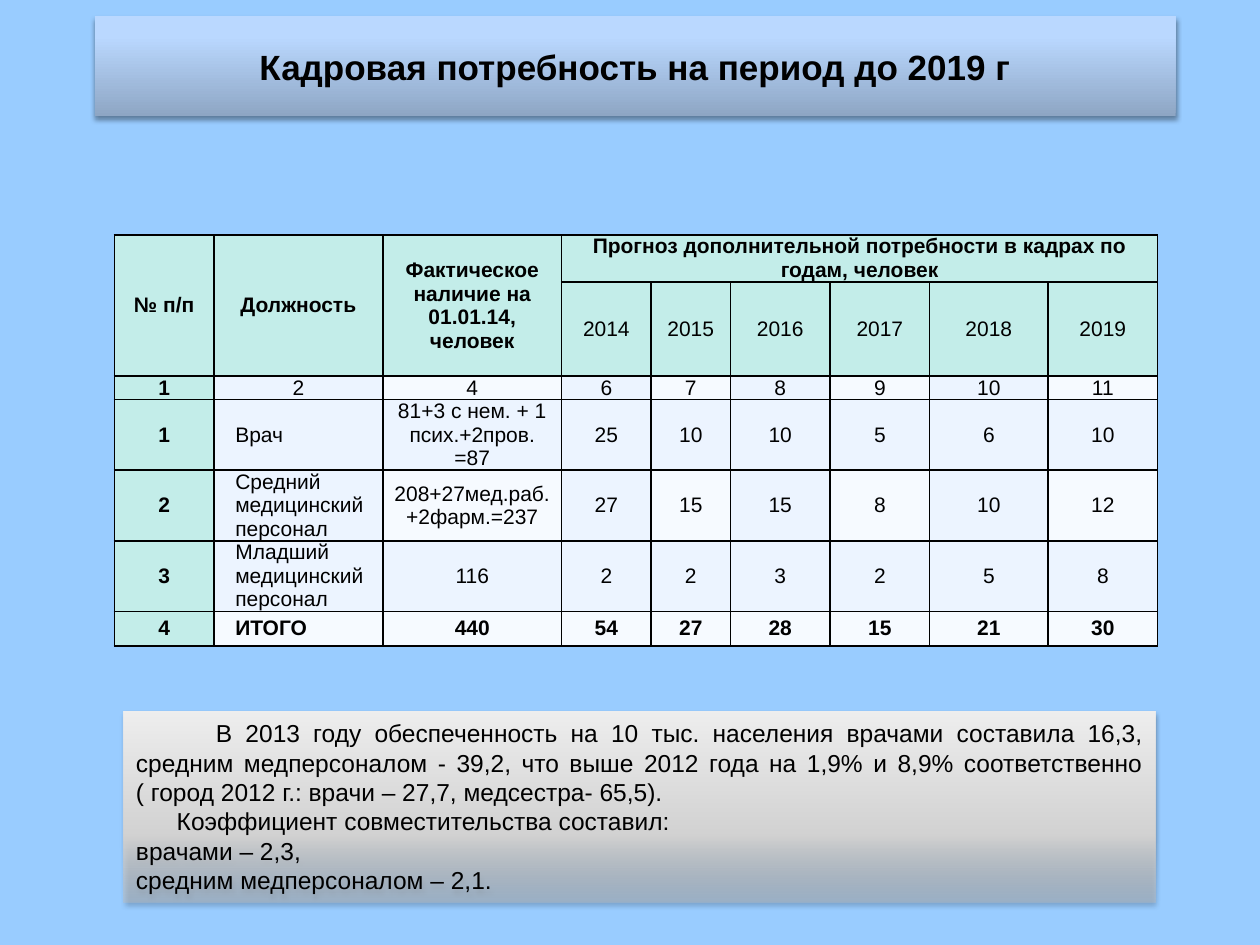
from dataclasses import dataclass

from pptx import Presentation
from pptx.dml.color import RGBColor
from pptx.enum.shapes import MSO_SHAPE
from pptx.enum.text import MSO_ANCHOR, PP_ALIGN
from pptx.oxml.ns import qn
from pptx.util import Pt
from lxml.etree import SubElement


@dataclass(frozen=True)
class Theme:
    font: str = "Arial"
    background: str = "99CCFF"
    ink: str = "000000"
    header: str = "C3EDE9"
    light: str = "ECF4FF"
    pale: str = "F6FAFF"
    title_stops: tuple = ((0, "8EA6C4", 100), (80, "BAD8FF", 100), (100, "BAD8FF", 100))
    note_stops: tuple = ((0, "BDBDBD", 46), (35, "D1D1D1", 100), (100, "EEEEEE", 100))
    title_size: int = 20
    table_size: int = 12
    note_size: int = 14


THEME = Theme()

COLUMN_WIDTHS = (56.9, 96.5, 102.2, 51.1, 45.4, 56.9, 56.9, 67.7, 62.6)
ROW_HEIGHTS = (26.8, 53.7, 13.5, 40.3, 40.3, 40.3, 19.7)
YEARS = range(2014, 2020)
HEADINGS = (
    "№ п/п",
    "Должность",
    "Фактическое наличие на 01.01.14, человек",
    "Прогноз дополнительной потребности в кадрах по годам, человек",
)
STAFF = (
    (1, 2, 4, 6, 7, 8, 9, 10, 11),
    (1, "Врач", "81+3 с нем. + 1 псих.+2пров. =87", 25, 10, 10, 5, 6, 10),
    (2, "Средний медицинский персонал", "208+27мед.раб.+2фарм.=237", 27, 15, 15, 8, 10, 12),
    (3, "Младший медицинский персонал", 116, 2, 2, 3, 2, 5, 8),
    (4, "ИТОГО", 440, 54, 27, 28, 15, 21, 30),
)
NUMBERING, TOTAL = 0, len(STAFF) - 1
ALTERNATING = (0, 2)
NOTES = (
    ("В 2013 году обеспеченность на 10 тыс. населения врачами составила 16,3, "
     "средним медперсоналом - 39,2, что выше 2012 года на 1,9% и 8,9% соответственно "
     "( город 2012 г.: врачи – 27,7, медсестра- 65,5).", 45.7),
    ("Коэффициент совместительства составил:", 23.3),
    ("врачами – 2,3,", 0),
    ("средним медперсоналом – 2,1.", 0),
)


def write(paragraph, text, size, bold=False, align=PP_ALIGN.CENTER, left=0, first_line=0):
    properties = paragraph._p.get_or_add_pPr()
    properties.set("marL", str(Pt(left)))
    properties.set("indent", str(Pt(first_line)))
    paragraph.alignment = align
    run = paragraph.add_run()
    run.text = str(text)
    run.font.name = THEME.font
    run.font.size = Pt(size)
    run.font.bold = bold
    run.font.color.rgb = RGBColor.from_string(THEME.ink)


def add_color(parent, color, opacity):
    node = SubElement(parent, qn("a:srgbClr"), val=color)
    if opacity < 100:
        SubElement(node, qn("a:alpha"), val=str(opacity * 1000))


def style_panel(panel, stops):
    panel.fill.gradient()
    panel.fill.gradient_angle = 90
    panel.line.fill.background()
    stop_list = panel.element.spPr.find(qn("a:gradFill")).find(qn("a:gsLst"))
    for old_stop in list(stop_list):
        stop_list.remove(old_stop)
    for position, color, opacity in stops:
        stop = SubElement(stop_list, qn("a:gs"), pos=str(position * 1000))
        add_color(stop, color, opacity)
    panel.shadow.inherit = False
    shadow = SubElement(
        panel.element.spPr.find(qn("a:effectLst")), qn("a:outerShdw"),
        blurRad=str(Pt(3.1)), dist=str(Pt(1.6)), dir="5400000", rotWithShape="0")
    add_color(shadow, THEME.ink, 38)


def add_borders(cell):
    properties = cell._tc.get_or_add_tcPr()
    for index, side in enumerate(("lnL", "lnR", "lnT", "lnB")):
        border = SubElement(properties, qn(f"a:{side}"), w=str(Pt(1)))
        add_color(SubElement(border, qn("a:solidFill")), THEME.ink, 100)
        properties.remove(border)
        properties.insert(index, border)


def style_cell(cell, color):
    cell.fill.solid()
    cell.fill.fore_color.rgb = RGBColor.from_string(color)
    cell.vertical_anchor = MSO_ANCHOR.MIDDLE
    cell.margin_left = cell.margin_right = Pt(3.6)
    cell.margin_top = cell.margin_bottom = 0
    add_borders(cell)


def staff_color(row, column):
    if column == 0:
        return THEME.header
    if row == TOTAL or (row in ALTERNATING and column % 2 == 0):
        return THEME.pale
    return THEME.light


def add_title(slide):
    title = slide.shapes.title
    title.left, title.top, title.width, title.height = Pt(54), Pt(9.4), Pt(617.8), Pt(56.9)
    title.text_frame.vertical_anchor = MSO_ANCHOR.MIDDLE
    write(title.text_frame.paragraphs[0], "Кадровая потребность на период до 2019 г",
          THEME.title_size, bold=True)
    style_panel(title, THEME.title_stops)


def add_staff_table(slide):
    table = slide.shapes.add_table(
        len(ROW_HEIGHTS), len(COLUMN_WIDTHS), Pt(65.4), Pt(134.2),
        Pt(sum(COLUMN_WIDTHS)), Pt(sum(ROW_HEIGHTS))).table
    table.first_row = table.horz_banding = False
    for column, width in zip(table.columns, COLUMN_WIDTHS):
        column.width = Pt(width)
    for row, height in zip(table.rows, ROW_HEIGHTS):
        row.height = Pt(height)

    for row in range(2):
        for column in range(len(COLUMN_WIDTHS)):
            style_cell(table.cell(row, column), THEME.header)
    for column, heading in enumerate(HEADINGS):
        write(table.cell(0, column).text_frame.paragraphs[0], heading,
              THEME.table_size, bold=True)
    for column in range(3):
        table.cell(0, column).merge(table.cell(1, column))
    table.cell(0, 3).merge(table.cell(0, len(COLUMN_WIDTHS) - 1))
    for column, year in enumerate(YEARS, start=3):
        write(table.cell(1, column).text_frame.paragraphs[0], year, THEME.table_size)

    for row, values in enumerate(STAFF):
        for column, value in enumerate(values):
            cell = table.cell(row + 2, column)
            style_cell(cell, staff_color(row, column))
            is_position = column == 1 and row != NUMBERING
            write(cell.text_frame.paragraphs[0], value, THEME.table_size,
                  bold=column == 0 or row == TOTAL,
                  align=PP_ALIGN.LEFT if is_position else PP_ALIGN.CENTER,
                  left=8.6 if is_position else 0)


def add_notes_panel(slide):
    panel = slide.shapes.add_shape(
        MSO_SHAPE.RECTANGLE, Pt(70.6), Pt(406.8), Pt(589.7), Pt(108.7))
    style_panel(panel, THEME.note_stops)
    frame = panel.text_frame
    frame.word_wrap = True
    frame.vertical_anchor = MSO_ANCHOR.TOP
    for index, (text, first_line) in enumerate(NOTES):
        paragraph = frame.add_paragraph() if index else frame.paragraphs[0]
        write(paragraph, text, THEME.note_size, align=PP_ALIGN.JUSTIFY, first_line=first_line)


def main():
    presentation = Presentation()
    presentation.slide_width, presentation.slide_height = Pt(720), Pt(540)
    slide = presentation.slides.add_slide(presentation.slide_layouts[0])
    subtitle = slide.placeholders[1].element
    subtitle.getparent().remove(subtitle)
    slide.background.fill.solid()
    slide.background.fill.fore_color.rgb = RGBColor.from_string(THEME.background)
    add_title(slide)
    add_staff_table(slide)
    add_notes_panel(slide)
    presentation.save("out.pptx")


if __name__ == "__main__":
    main()
